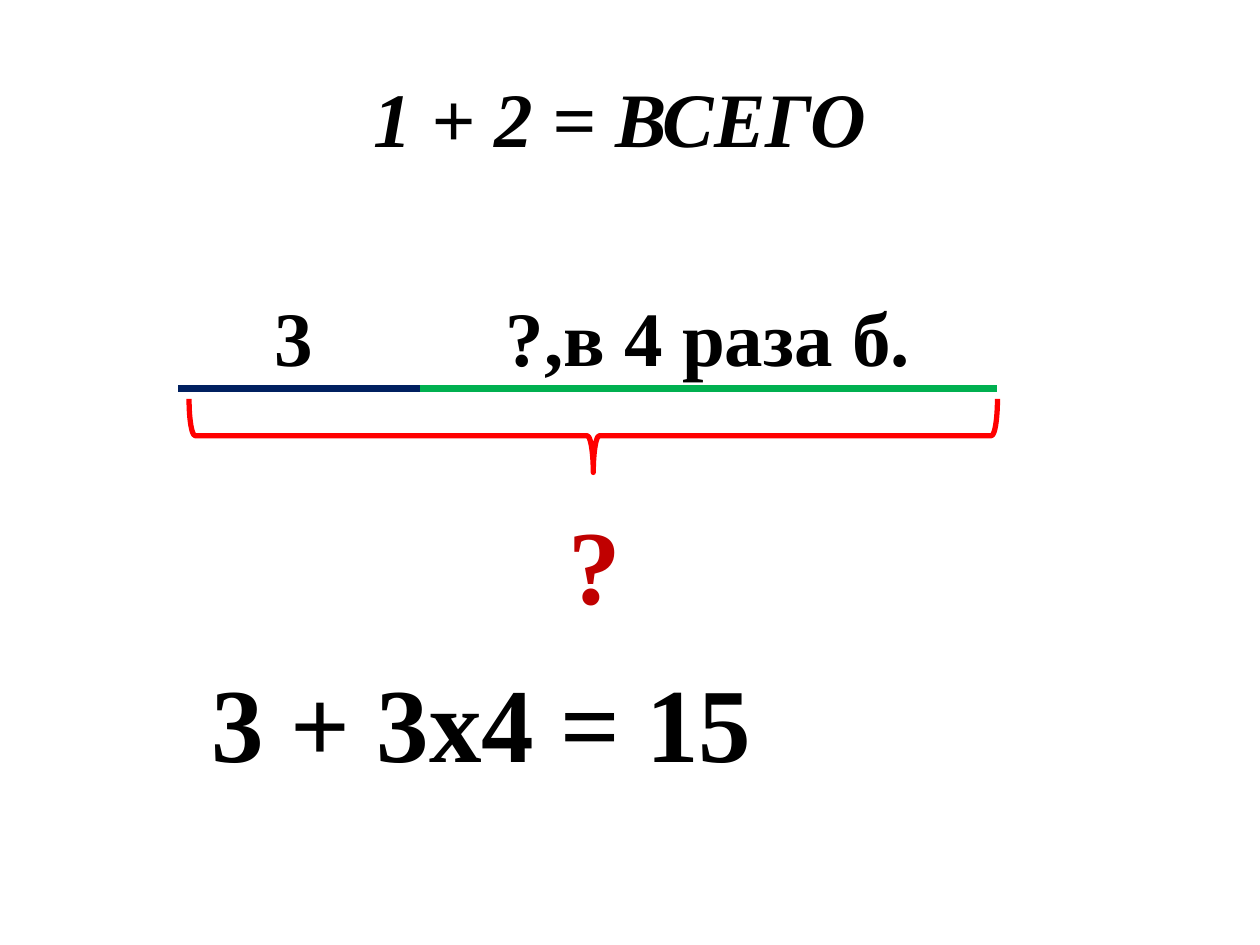
"""Build a slide that solves a sum problem with a segment diagram."""
from lxml import etree
from pptx import Presentation
from pptx.dml.color import RGBColor
from pptx.enum.shapes import MSO_CONNECTOR, MSO_SHAPE
from pptx.enum.text import MSO_ANCHOR, MSO_AUTO_SIZE, PP_ALIGN
from pptx.oxml.ns import qn
from pptx.util import Pt

STRAIGHT = MSO_CONNECTOR.STRAIGHT
BRACE = MSO_SHAPE.RIGHT_BRACE
MIDDLE = MSO_ANCHOR.MIDDLE
CENTER = PP_ALIGN.CENTER
GROW = MSO_AUTO_SIZE.SHAPE_TO_FIT_TEXT
NO_FIT = MSO_AUTO_SIZE.NONE


def rgb(value):
    return RGBColor.from_string(value)


def style(paragraph, size, color, italic=False):
    font = paragraph.font
    font.name = "Times New Roman"
    font.size = Pt(size)
    font.bold = True
    font.italic = italic
    font.color.rgb = rgb(color)


prs = Presentation()
prs.slide_width, prs.slide_height = Pt(720), Pt(540)
slide = prs.slides.add_slide(prs.slide_layouts[5])

title = slide.shapes.title
title.left, title.top, title.width, title.height = Pt(36), Pt(21.6), Pt(648), Pt(90)
title.text_frame.text = "1 + 2 = ВСЕГО "
title.text_frame.vertical_anchor = MIDDLE
title.text_frame.auto_size = NO_FIT
title.text_frame.paragraphs[0].alignment = CENTER
style(title.text_frame.paragraphs[0], 44, "000000", italic=True)

segment_y = Pt(222)
for start, end, color in [(102, 240, "002060"), (240, 570, "00B050")]:
    segment = slide.shapes.add_connector(STRAIGHT, Pt(start), segment_y, Pt(end), segment_y)
    segment.line.color.rgb = rgb(color)
    segment.line.width = Pt(4.5)
    etree.SubElement(segment._element.spPr, qn("a:effectLst"))

total_brace = slide.shapes.add_shape(BRACE, Pt(318), Pt(18), Pt(42), Pt(462))
total_brace.rotation = 90
total_brace.shadow.inherit = False
total_brace.fill.background()
total_brace.line.color.rgb = rgb("FF0000")
total_brace.line.width = Pt(3)

labels = [
    ("3", 150, 162, 66, 60.5, 44, "000000"),
    ("?,в 4 раза б.", 282, 162, 276, 60.5, 44, "000000"),
    ("?", 318, 282, 54, 80, 60, "C00000"),
    ("3 + 3х4 = 15", 114, 372, 348, 80, 60, "000000"),
]
for text, left, top, width, height, size, color in labels:
    label = slide.shapes.add_textbox(Pt(left), Pt(top), Pt(width), Pt(height))
    label.text_frame.word_wrap = True
    label.text_frame.auto_size = GROW
    label.text_frame.text = text
    style(label.text_frame.paragraphs[0], size, color)

prs.save("out.pptx")
